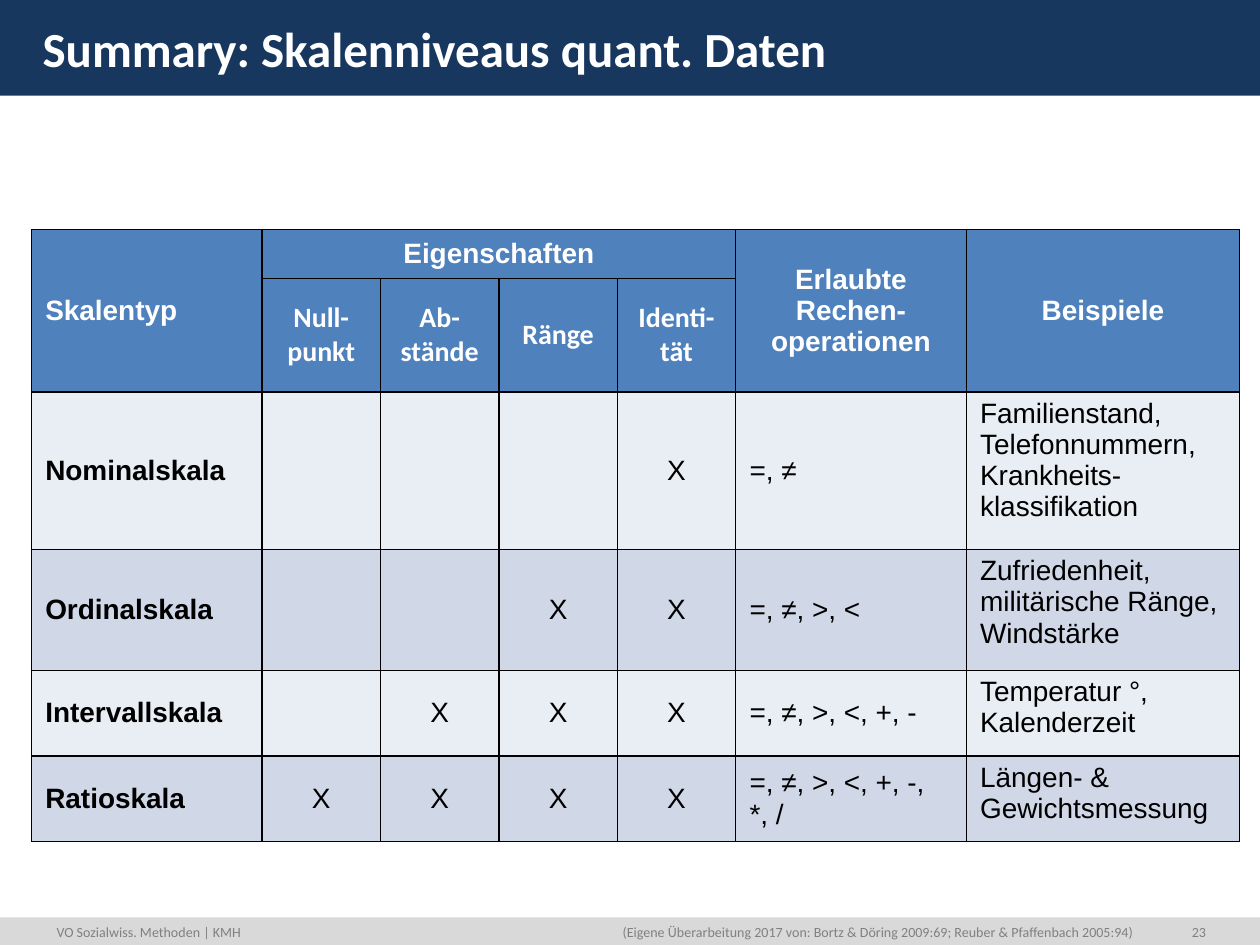
from dataclasses import dataclass

from lxml.etree import SubElement
from pptx import Presentation
from pptx.dml.color import RGBColor
from pptx.enum.shapes import MSO_SHAPE as Shape
from pptx.enum.text import MSO_ANCHOR as Anchor, PP_ALIGN as Align
from pptx.oxml.ns import qn
from pptx.util import Inches, Pt

# Layout grid: 100 columns by 75 rows of square units
COLUMNS, ROWS = 100, 75
UNIT = Inches(10) / COLUMNS


@dataclass(frozen=True)
class Theme:
    navy: str = "17375E"
    footer: str = "D9D9D9"
    header: str = "4F81BD"
    bands: tuple = ("E9EDF4", "D0D8E8")
    white: str = "FFFFFF"
    black: str = "000000"
    grey: str = "808080"
    heading_font: str = "Calibri"
    table_font: str = "Arial"
    title_size: int = 28
    table_size: int = 16
    footer_size: int = 8
    border: int = 1


THEME = Theme()

COLUMN_WIDTHS = [18.3] + [9.4] * 4 + [18.3, 21.7]
ROW_HEIGHTS = [3.9, 6.8, 12.5, 9.6, 6.8, 6.8]
PROPERTIES = ["Null-punkt", "Ab-stände", "Ränge", "Identi-tät"]
# Scale, number of properties it has (counted from the right), operations, examples
SCALES = [
    ("Nominalskala", 1, "=, ≠",
     "Familienstand, Telefonnummern, Krankheits-klassifikation"),
    ("Ordinalskala", 2, "=, ≠, >, <",
     "Zufriedenheit, militärische Ränge, Windstärke"),
    ("Intervallskala", 3, "=, ≠, >, <, +, -", "Temperatur °, Kalenderzeit"),
    ("Ratioskala", 4, "=, ≠, >, <, +, -, \v*, /", "Längen- & Gewichtsmessung"),
]


def units(count):
    return round(count * UNIT)


def area(*counts):
    return [units(count) for count in counts]


def color(code):
    return RGBColor.from_string(code)


def write(text_frame, text, size, ink, font, bold=False, align=Align.LEFT):
    text_frame.text = text
    paragraph = text_frame.paragraphs[0]
    paragraph.alignment = align
    for run in paragraph.runs:
        run.font.size = Pt(size)
        run.font.name = font
        run.font.bold = bold
        run.font.color.rgb = color(ink)


def add_bar(slide, top, height, fill):
    shape = slide.shapes.add_shape(Shape.RECTANGLE, *area(0, top, COLUMNS, height))
    shape.shadow.inherit = False
    shape.fill.solid()
    shape.fill.fore_color.rgb = color(fill)
    shape.line.fill.background()


def add_text(slide, box, text, size, ink, bold=False, align=Align.LEFT,
             anchor=Anchor.TOP):
    text_frame = slide.shapes.add_textbox(*area(*box)).text_frame
    text_frame.word_wrap = True
    text_frame.vertical_anchor = anchor
    write(text_frame, text, size, ink, THEME.heading_font, bold, align)


def style_cell(cell, fill):
    # Borders precede the fill in the cell properties
    properties = cell._tc.get_or_add_tcPr()
    for side in ("a:lnL", "a:lnR", "a:lnT", "a:lnB"):
        line = SubElement(properties, qn(side), w=str(Pt(THEME.border)))
        solid = SubElement(line, qn("a:solidFill"))
        SubElement(solid, qn("a:srgbClr"), val=THEME.black)
    cell.fill.solid()
    cell.fill.fore_color.rgb = color(fill)
    cell.margin_left = cell.margin_right = Inches(0.11)
    cell.margin_top = cell.margin_bottom = Inches(0.05)


def fill_cell(cell, text, ink=THEME.black, font=THEME.table_font, bold=False,
              align=Align.LEFT, anchor=Anchor.MIDDLE):
    cell.vertical_anchor = anchor
    write(cell.text_frame, text, THEME.table_size, ink, font, bold, align)


def fill_header(table):
    merges = [(0, 0, 1, 0), (0, 1, 0, 4), (0, 5, 1, 5), (0, 6, 1, 6)]
    for top, left, bottom, right in merges:
        table.cell(top, left).merge(table.cell(bottom, right))
    labels = [(0, "Skalentyp", Align.LEFT), (1, "Eigenschaften", Align.CENTER),
              (5, "Erlaubte Rechen-operationen", Align.CENTER),
              (6, "Beispiele", Align.CENTER)]
    for column, label, align in labels:
        fill_cell(table.cell(0, column), label, THEME.white, bold=True, align=align)
    for column, label in enumerate(PROPERTIES, start=1):
        fill_cell(table.cell(1, column), label, THEME.white, THEME.heading_font,
                  bold=True, align=Align.CENTER)


def fill_scale(table, row, scale, count, operations, examples):
    fill_cell(table.cell(row, 0), scale, bold=True)
    last = len(PROPERTIES)
    for column in range(last - count + 1, last + 1):
        fill_cell(table.cell(row, column), "X", align=Align.CENTER)
    fill_cell(table.cell(row, 5), operations)
    fill_cell(table.cell(row, 6), examples, anchor=Anchor.TOP)


def add_scale_table(slide):
    table = slide.shapes.add_table(
        len(ROW_HEIGHTS), len(COLUMN_WIDTHS),
        *area(2.5, 18.2, sum(COLUMN_WIDTHS), sum(ROW_HEIGHTS))).table
    table.first_row = table.horz_banding = False
    for column, width in zip(table.columns, COLUMN_WIDTHS):
        column.width = units(width)
    for index, (row, height) in enumerate(zip(table.rows, ROW_HEIGHTS)):
        row.height = units(height)
        fill = THEME.header if index < 2 else THEME.bands[index % 2]
        for cell in row.cells:
            style_cell(cell, fill)
    fill_header(table)
    for row, scale in enumerate(SCALES, start=2):
        fill_scale(table, row, *scale)


def main():
    presentation = Presentation()
    presentation.slide_width, presentation.slide_height = area(COLUMNS, ROWS)
    slide = presentation.slides.add_slide(presentation.slide_layouts[6])

    # Footer and title bars
    add_bar(slide, 72.8, 2.2, THEME.footer)
    add_bar(slide, 0, 7.6, THEME.navy)

    # Footer texts
    add_text(slide, (3.5, 72.8, 29.9, 2.4), "VO Sozialwiss. Methoden | KMH",
             THEME.footer_size, THEME.grey)
    add_text(slide, (92.5, 72.8, 4.2, 2.4), "23",
             THEME.footer_size, THEME.grey, align=Align.RIGHT)

    # Title and table
    add_text(slide, (2.4, 1, 94.4, 5), "Summary: Skalenniveaus quant. Daten",
             THEME.title_size, THEME.white, bold=True)
    add_scale_table(slide)

    # Reference
    add_text(slide, (38.2, 72.1, 52.8, 3.7),
             "(Eigene Überarbeitung 2017 von: Bortz & Döring 2009:69; "
             "Reuber & Pfaffenbach 2005:94)",
             THEME.footer_size, THEME.grey, align=Align.RIGHT, anchor=Anchor.MIDDLE)

    presentation.save("out.pptx")


if __name__ == "__main__":
    main()
